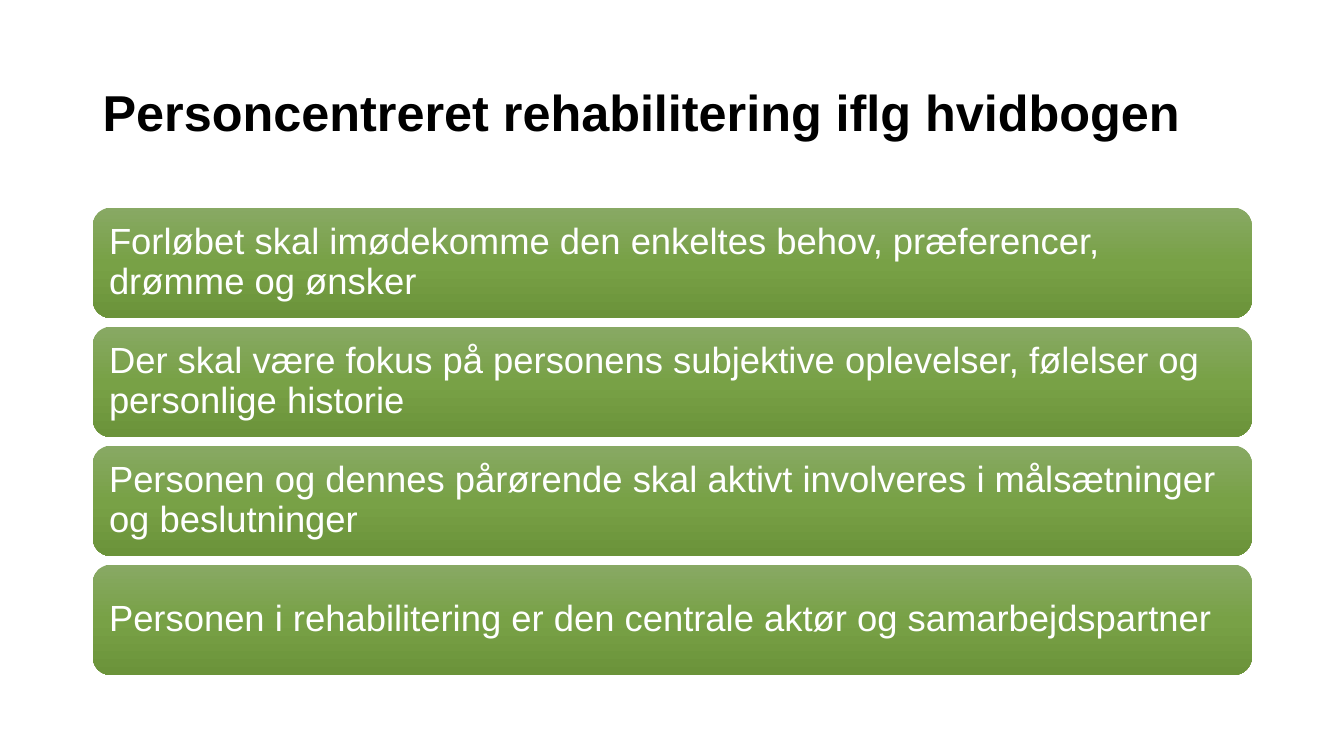
from copy import deepcopy

from pptx import Presentation
from pptx import util as u
from pptx.dml.color import RGBColor
from pptx.enum import shapes, text
from pptx.oxml.ns import qn

COLORS = {
    "title": "000000",
    "bar_text": "FFFFFF",
    "bar_top": "88A964",
    "bar_middle": "78A146",
    "bar_bottom": "6B933A",
}
LEFT, WIDTH = 66.24, 828
BAR_TOP, BAR_HEIGHT, BAR_STEP = 148.25, 79, 85
PRINCIPLES = [
    "Forløbet skal imødekomme den enkeltes behov, præferencer, drømme og ønsker",
    "Der skal være fokus på personens subjektive oplevelser, følelser og personlige historie",
    "Personen og dennes pårørende skal aktivt involveres i målsætninger og beslutninger",
    "Personen i rehabilitering er den centrale aktør og samarbejdspartner",
]


def color(name):
    return RGBColor.from_string(COLORS[name])


def write(sp, words, color_name, line_spacing, **font_values):
    """Put one left-aligned, vertically centred paragraph into a shape."""
    tf = sp.text_frame
    tf.word_wrap = True
    tf.vertical_anchor = text.MSO_ANCHOR.MIDDLE
    p = tf.paragraphs[0]
    p.alignment = text.PP_ALIGN.LEFT
    p.line_spacing = line_spacing
    r = p.add_run()
    r.text = words
    for name, value in {"name": "Arial", **font_values}.items():
        setattr(r.font, name, value)
    r.font.color.rgb = color(color_name)


def fill_gradient(sp):
    """Shade a shape from top to bottom with three evenly spaced stops."""
    sp.fill.gradient()
    sp.fill.gradient_angle = 270
    stop_list = next(sp._element.iter(qn("a:gsLst")))
    stop_list.append(deepcopy(stop_list[-1]))
    names = ("bar_top", "bar_middle", "bar_bottom")
    for i, (stop, name) in enumerate(zip(sp.fill.gradient_stops, names)):
        stop.position = i / 2
        stop.color.rgb = color(name)


def add_title(s, words):
    sp = s.shapes.add_textbox(u.Pt(LEFT), u.Pt(28.8), u.Pt(WIDTH), u.Pt(104.4))
    write(sp, words, "title", 0.97, size=u.Pt(36), bold=True)


def add_bar(s, top, words):
    sp = s.shapes.add_shape(shapes.MSO_SHAPE.ROUNDED_RECTANGLE,
                            u.Pt(LEFT), u.Pt(top), u.Pt(WIDTH), u.Pt(BAR_HEIGHT))
    sp.shadow.inherit = False
    sp.line.fill.background()
    fill_gradient(sp)
    for side in ("left", "top", "right", "bottom"):
        setattr(sp.text_frame, f"margin_{side}", u.Pt(7.8))
    write(sp, words, "bar_text", 0.9, size=u.Pt(26))


def main():
    prs = Presentation()
    prs.slide_width, prs.slide_height = u.Pt(960), u.Pt(540)
    s = prs.slides.add_slide(prs.slide_layouts[6])
    add_title(s, "Personcentreret rehabilitering iflg hvidbogen")
    for i, words in enumerate(PRINCIPLES):
        add_bar(s, BAR_TOP + i * BAR_STEP, words)
    prs.save("out.pptx")


if __name__ == "__main__":
    main()
